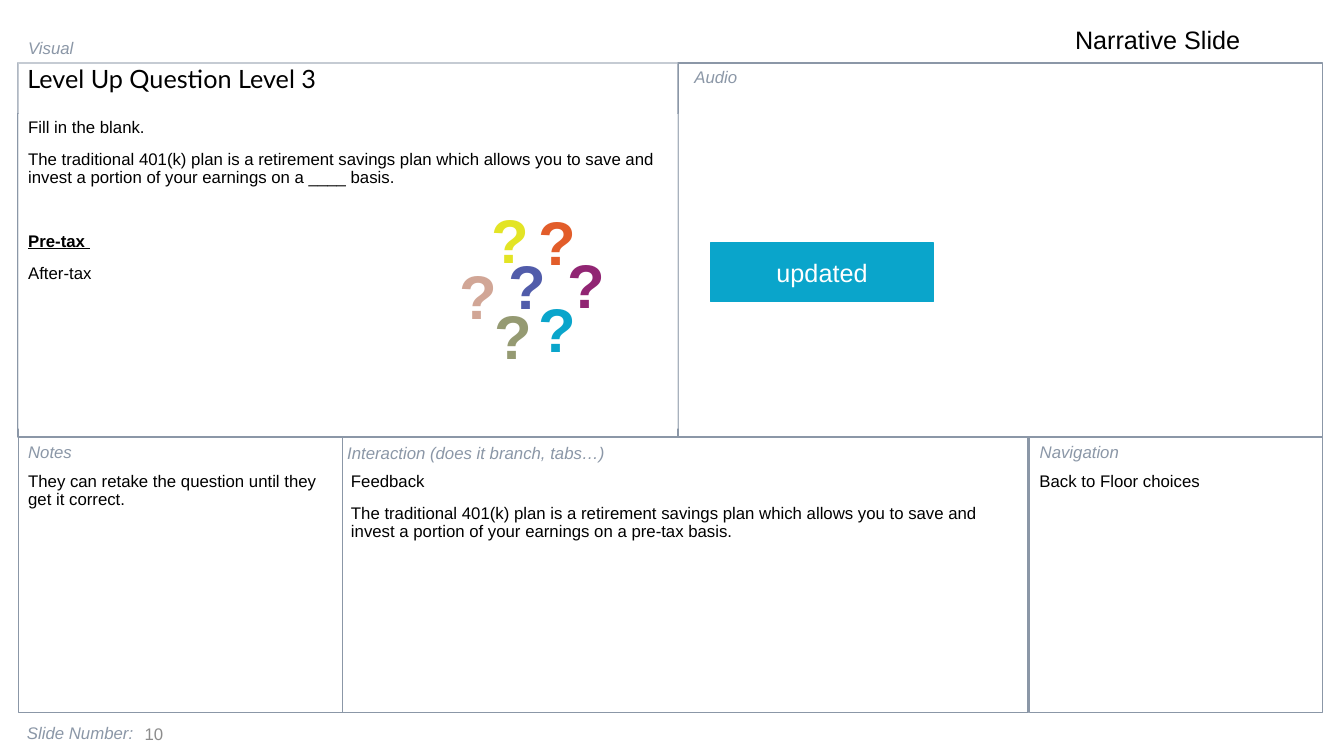
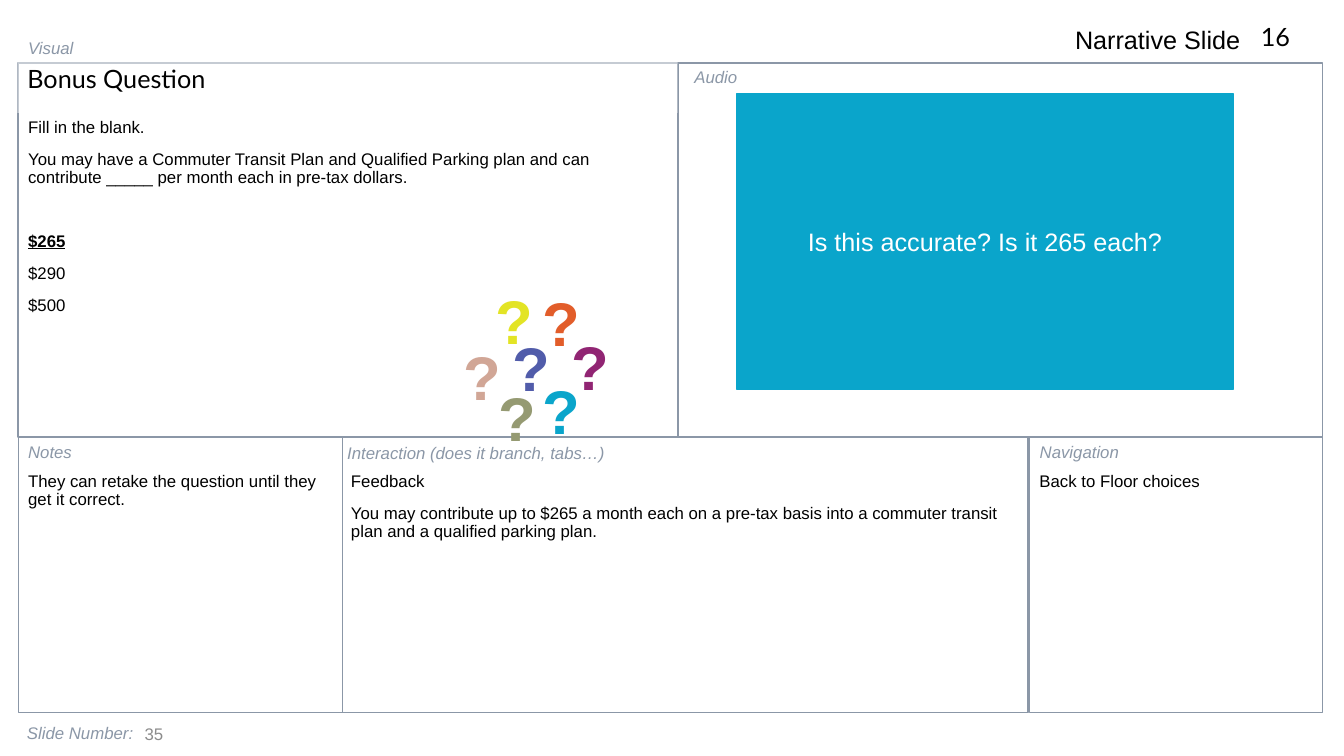
"""Build two storyboard slides for a benefits quiz."""
from dataclasses import dataclass
from typing import NamedTuple

import lxml.etree
import pptx
import pptx.dml.color
import pptx.enum.shapes
import pptx.enum.text
import pptx.oxml.ns
import pptx.presentation
import pptx.shapes.autoshape
import pptx.slide
import pptx.util

Pt = pptx.util.Pt
Align = pptx.enum.text.PP_ALIGN
Anchor = pptx.enum.text.MSO_ANCHOR

COLORS = {
    "ink": "000000", "paper": "FFFFFF", "frame": "8B97A7", "number": "8C8C8C",
    "teal": "0AA5CB", "plum": "912573", "indigo": "515CAA", "blush": "D1A696",
    "orange": "E25D2A", "yellow": "E3E425", "olive": "959A72",
}


class Box(NamedTuple):
    left: float
    top: float
    width: float
    height: float


class Style(NamedTuple):
    size: float = 12
    color: str = "ink"
    font: str = "Arial"
    bold: bool = False
    italic: bool = False
    align: Align = Align.LEFT
    anchor: Anchor = Anchor.TOP
    spacing: float = 1.0
    before: float = 0


class Label(NamedTuple):
    text: str
    box: Box
    style: Style


class Mark(NamedTuple):
    color: str
    dx: float
    dy: float


@dataclass(frozen=True)
class Question:
    heading: str
    prompt: str
    answer: str
    distractors: tuple[str, ...]
    feedback: str
    number: str
    marks_left: float
    marks_top: float
    comment: str
    comment_box: Box
    prompt_veil: float = 0
    reference: str = ""


LEFT, SPLIT, RIGHT = 13, 484.4, 944.8
TOP, MIDDLE, BOTTOM = 45, 312.2, 509
NOTES_END, NAVIGATION = 244.8, 735.6
COPY_TOP = 334

CAPTION = Style(color="frame", italic=True)
BODY = Style(spacing=0.9, before=10)
HEADING = BODY._replace(size=18, font="Lato")
MARK = Style(size=44, bold=True, align=Align.CENTER)
COMMENT = Style(size=18, color="paper", align=Align.CENTER, anchor=Anchor.MIDDLE)
ANSWER_GAP = 32.5

FRAMES = (
    Box(LEFT, TOP, SPLIT - LEFT, MIDDLE - TOP),
    Box(SPLIT, TOP, RIGHT - SPLIT, MIDDLE - TOP),
    Box(LEFT, MIDDLE, NOTES_END - LEFT, BOTTOM - MIDDLE),
    Box(NOTES_END, MIDDLE, 489.6, BOTTOM - MIDDLE),
    Box(NAVIGATION, MIDDLE, RIGHT - NAVIGATION, BOTTOM - MIDDLE),
)
LABELS = (
    Label("Visual", Box(LEFT, 23.4, 111, 21.8), CAPTION),
    Label("Audio", Box(488.9, 44.2, 111, 21.8), CAPTION),
    Label("Notes", Box(LEFT, MIDDLE, 111, 21.8), CAPTION),
    Label("Interaction (does it branch, tabs…)", Box(240.9, MIDDLE + 0.5, 323, 21.8), CAPTION),
    Label("Navigation", Box(NAVIGATION, MIDDLE, 100, 21.8), CAPTION),
    Label("Slide Number:", Box(12.2, BOTTOM, 216, 28.8), CAPTION._replace(anchor=Anchor.MIDDLE)),
    Label("Narrative Slide", Box(750, 14, 143, 29), Style(size=18, align=Align.RIGHT)),
)
MARKS = (
    Mark("plum", 77, 32.4), Mark("indigo", 34.7, 33.1), Mark("blush", 0, 40.1),
    Mark("orange", 56.5, 1.4), Mark("teal", 56.2, 64.1), Mark("yellow", 23, 0),
    Mark("olive", 25.2, 69.1),
)
QUESTIONS = (
    Question(
        heading="Level Up Question Level 3",
        prompt="The traditional 401(k) plan is a retirement savings plan which allows you "
               "to save and invest a portion of your earnings on a ____ basis.",
        answer="Pre-tax ",
        distractors=("After-tax",),
        feedback="The traditional 401(k) plan is a retirement savings plan which allows you "
                 "to save and invest a portion of your earnings on a pre-tax basis.",
        number="10", marks_left=320.4, marks_top=140.4,
        comment="updated", comment_box=Box(507.6, 173.5, 159.1, 41.8),
        prompt_veil=74,
    ),
    Question(
        heading="Bonus Question",
        prompt="You may have a Commuter Transit Plan and Qualified Parking plan and can "
               "contribute _____ per month each in pre-tax dollars.",
        answer="$265",
        distractors=("$290", "$500"),
        feedback="You may contribute up to $265 a month each on a pre-tax basis into a "
                 "commuter transit plan and a qualified parking plan.",
        number="35", marks_left=323.3, marks_top=198.7,
        comment="Is this accurate? Is it 265 each?", comment_box=Box(526.2, 67, 354.8, 210.8),
        reference="16",
    ),
)


def rgb(color: str) -> pptx.dml.color.RGBColor:
    """Look up a named colour."""
    return pptx.dml.color.RGBColor.from_string(COLORS[color])


def write(shape: pptx.shapes.autoshape.Shape, lines: tuple[str, ...], style: Style) -> None:
    """Fill a shape with one paragraph per line in a single style."""
    frame = shape.text_frame
    frame.text = "\n".join(lines)
    frame.word_wrap = True
    frame.auto_size = pptx.enum.text.MSO_AUTO_SIZE.NONE
    frame.vertical_anchor = style.anchor
    for paragraph in frame.paragraphs:
        paragraph.alignment = style.align
        paragraph.line_spacing = style.spacing
        paragraph.space_before = Pt(style.before)
        font = paragraph.font
        font.name, font.size = style.font, Pt(style.size)
        font.bold, font.italic = style.bold, style.italic
        font.color.rgb = rgb(style.color)


def add_text(slide: pptx.slide.Slide, box: Box, style: Style,
             *lines: str) -> pptx.shapes.autoshape.Shape:
    """Add a text box."""
    copy = slide.shapes.add_textbox(*map(Pt, box))
    write(copy, lines, style)
    return copy


def add_panel(slide: pptx.slide.Slide, box: Box, outline: str,
              fill: str = "") -> pptx.shapes.autoshape.Shape:
    """Add an outlined rectangle, filled when a fill is named."""
    panel = slide.shapes.add_shape(pptx.enum.shapes.MSO_SHAPE.RECTANGLE, *map(Pt, box))
    panel.shadow.inherit = False
    panel.line.color.rgb = rgb(outline)
    panel.line.width = Pt(1)
    if fill:
        panel.fill.solid()
        panel.fill.fore_color.rgb = rgb(fill)
    else:
        panel.fill.background()
    return panel


def veil(shape: pptx.shapes.autoshape.Shape, opacity: float) -> None:
    """Give a shape a see-through white fill."""
    shape.fill.solid()
    shape.fill.fore_color.rgb = rgb("paper")
    qn = pptx.oxml.ns.qn
    tint = shape._element.spPr.find(qn("a:solidFill")).find(qn("a:srgbClr"))
    lxml.etree.SubElement(tint, qn("a:alpha")).set("val", str(round(opacity * 1000)))


def add_storyboard(slide: pptx.slide.Slide) -> None:
    """Draw the frames and captions that every slide shares."""
    for box in FRAMES:
        add_panel(slide, box, "frame")
    for label in LABELS:
        add_text(slide, label.box, label.style, label.text)


def set_heading(slide: pptx.slide.Slide, text: str) -> None:
    """Place the title above the frames and format it."""
    heading = slide.shapes.title
    slide.shapes._spTree.append(heading._element)
    heading.left, heading.top, heading.width, heading.height = map(Pt, (12.4, 44.2, 471.6, 36.4))
    write(heading, (text,), HEADING)
    veil(heading, 50)


def add_prompt(slide: pptx.slide.Slide, question: Question) -> None:
    """Add the question with its correct answer emphasised."""
    prompt = add_text(slide, Box(LEFT, 81.2, 471.6, 225), BODY, "Fill in the blank.",
                      question.prompt, question.answer, *question.distractors)
    answer = prompt.text_frame.paragraphs[2]
    answer.space_before = Pt(ANSWER_GAP)
    answer.font.bold = answer.font.underline = True
    if question.prompt_veil:
        veil(prompt, question.prompt_veil)


def add_question(deck: pptx.presentation.Presentation, question: Question) -> None:
    """Add one complete question slide."""
    slide = deck.slides.add_slide(deck.slide_layouts[5])
    add_storyboard(slide)
    set_heading(slide, question.heading)
    add_prompt(slide, question)
    add_text(slide, Box(LEFT, COPY_TOP, 231, 175), BODY,
             "They can retake the question until they get it correct.")
    add_text(slide, Box(243.6, COPY_TOP, 491, 175), BODY, "Feedback", question.feedback)
    add_text(slide, Box(735.4, COPY_TOP, 209, 175), BODY, "Back to Floor choices")
    add_text(slide, Box(87.8, 509.8, 36, 28.8),
             Style(color="number", align=Align.RIGHT, anchor=Anchor.MIDDLE), question.number)
    if question.reference:
        reference = add_text(slide, Box(893.5, 14.4, 51.1, 29.5), HEADING, question.reference)
        veil(reference, 50)
    for mark in MARKS:
        add_text(slide, Box(question.marks_left + mark.dx, question.marks_top + mark.dy, 42.5, 60.5),
                 MARK._replace(color=mark.color), "?")
    comment = add_panel(slide, question.comment_box, "teal", "teal")
    write(comment, (question.comment,), COMMENT)


def main() -> None:
    """Build and save the presentation."""
    deck = pptx.Presentation()
    deck.slide_width, deck.slide_height = Pt(960), Pt(540)
    for question in QUESTIONS:
        add_question(deck, question)
    deck.save("out.pptx")


if __name__ == "__main__":
    main()
